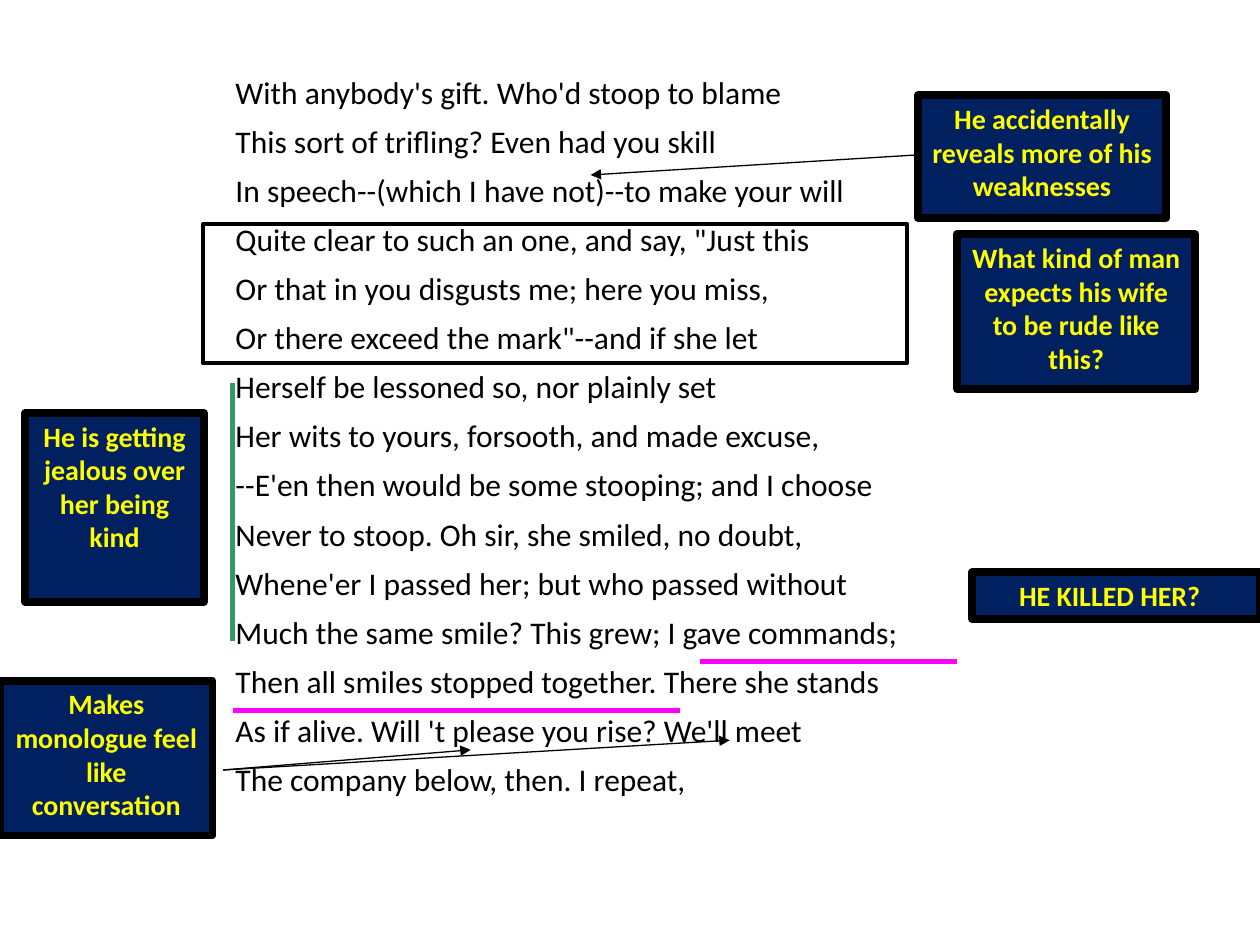
import pptx
import pptx.util
import pptx.dml.color
import pptx.enum.shapes
import pptx.enum.text
import pptx.oxml.ns
import lxml.etree
from dataclasses import dataclass

Pt = pptx.util.Pt
RGB = pptx.dml.color.RGBColor
RECT = pptx.enum.shapes.MSO_SHAPE.RECTANGLE
STRAIGHT = pptx.enum.shapes.MSO_CONNECTOR.STRAIGHT
ALIGN = pptx.enum.text.PP_ALIGN
qn = pptx.oxml.ns.qn


@dataclass(frozen=True)
class Theme:
    font: str = "Calibri"
    poem_size: int = 18
    note_size: int = 16
    ink: RGB = RGB(0, 0, 0)
    paper: RGB = RGB(255, 255, 255)
    note_fill: RGB = RGB(0, 32, 96)
    note_text: RGB = RGB(255, 255, 0)
    underline: RGB = RGB(255, 0, 255)
    bar: RGB = RGB(51, 153, 102)


theme = Theme()


def add_box(left, top, width, height, fill=None, line_width=None):
    """Add a rectangle with an optional fill and black outline."""
    sp = s.shapes.add_shape(RECT, Pt(left), Pt(top), Pt(width), Pt(height))
    sp.shadow.inherit = False
    if fill is None:
        sp.fill.background()
    else:
        sp.fill.solid()
        sp.fill.fore_color.rgb = fill
    if line_width is None:
        sp.line.fill.background()
    else:
        sp.line.color.rgb = theme.ink
        sp.line.width = Pt(line_width)
    tf = sp.text_frame
    tf.word_wrap = True
    tf.vertical_anchor = pptx.enum.text.MSO_ANCHOR.TOP
    return sp


def add_run(p, text, size, color, bold=False):
    r = p.add_run()
    r.text = text
    r.font.name = theme.font
    r.font.size = Pt(size)
    r.font.bold = bold
    r.font.color.rgb = color


prs = pptx.Presentation()
prs.slide_width, prs.slide_height = Pt(720), Pt(540)
s = prs.slides.add_slide(prs.slide_layouts[6])

# Poem
poem = [
    "With anybody's gift. Who'd stoop to blame",
    "This sort of trifling? Even had you skill",
    "In speech--(which I have not)--to make your will",
    "Quite clear to such an one, and say, \"Just this",
    "Or that in you disgusts me; here you miss,",
    "Or there exceed the mark\"--and if she let",
    "Herself be lessoned so, nor plainly set",
    "Her wits to yours, forsooth, and made excuse,",
    "--E'en then would be some stooping; and I choose",
    "Never to stoop. Oh sir, she smiled, no doubt,",
    "Whene'er I passed her; but who passed without",
    "Much the same smile? This grew; I gave commands;",
    "Then all smiles stopped together. There she stands",
    "As if alive. Will 't please you rise? We'll meet",
    "The company below, then. I repeat,",
]
sp = add_box(127.5, 31.5, 453.5, 429, theme.paper)
color = sp.fill._xPr.find(qn("a:solidFill"))[0]
lxml.etree.SubElement(color, qn("a:alpha"), val="70000")
p = sp.text_frame.paragraphs[0]
p.alignment = ALIGN.LEFT
p.line_spacing = 1.3
for i, verse in enumerate(poem):
    if i:
        p.add_line_break()
    add_run(p, verse, theme.poem_size, theme.ink)

# Frame around the quoted verses
add_box(116, 128, 402.5, 79.5, line_width=2.25)

# Notes: text, left, top, width, height, right inset
notes = [
    ("He accidentally reveals more of his weaknesses", 524.5, 54.5, 142, 70, 7.2),
    ("What kind of man expects his wife to be rude like this?", 547, 134, 136, 88.5, 7.2),
    ("HE KILLED HER?", 555.5, 327, 164.5, 26.5, 14.4),
    ("Makes monologue feel like conversation", 0, 389, 121.5, 88.5, 7.2),
    ("He is getting jealous over her being kind", 14.5, 236, 102, 108, 7.2),
]
for text, left, top, width, height, inset in notes:
    sp = add_box(left, top, width, height, theme.note_fill, 4.5)
    sp.text_frame.margin_right = Pt(inset)
    p = sp.text_frame.paragraphs[0]
    p.alignment = ALIGN.CENTER
    add_run(p, text, theme.note_size, theme.note_text, bold=True)

# Marks: x1, y1, x2, y2, colour, width, arrowhead
marks = [
    (524.5, 88.5, 337.5, 100, theme.ink, 0.75, True),
    (127.5, 440, 269, 428.5, theme.ink, 0.75, True),
    (127.5, 440, 417, 423, theme.ink, 0.75, True),
    (400, 378, 547, 378, theme.underline, 3, False),
    (133, 406, 388.5, 406, theme.underline, 3, False),
    (133, 219, 133, 366.5, theme.bar, 3, False),
]
for x1, y1, x2, y2, color, width, arrow in marks:
    line = s.shapes.add_connector(STRAIGHT, Pt(x1), Pt(y1), Pt(x2), Pt(y2))
    line.line.color.rgb = color
    line.line.width = Pt(width)
    if arrow:
        lxml.etree.SubElement(line.line._get_or_add_ln(), qn("a:tailEnd"), type="triangle")
    lxml.etree.SubElement(line._element.spPr, qn("a:effectLst"))

prs.save("out.pptx")
